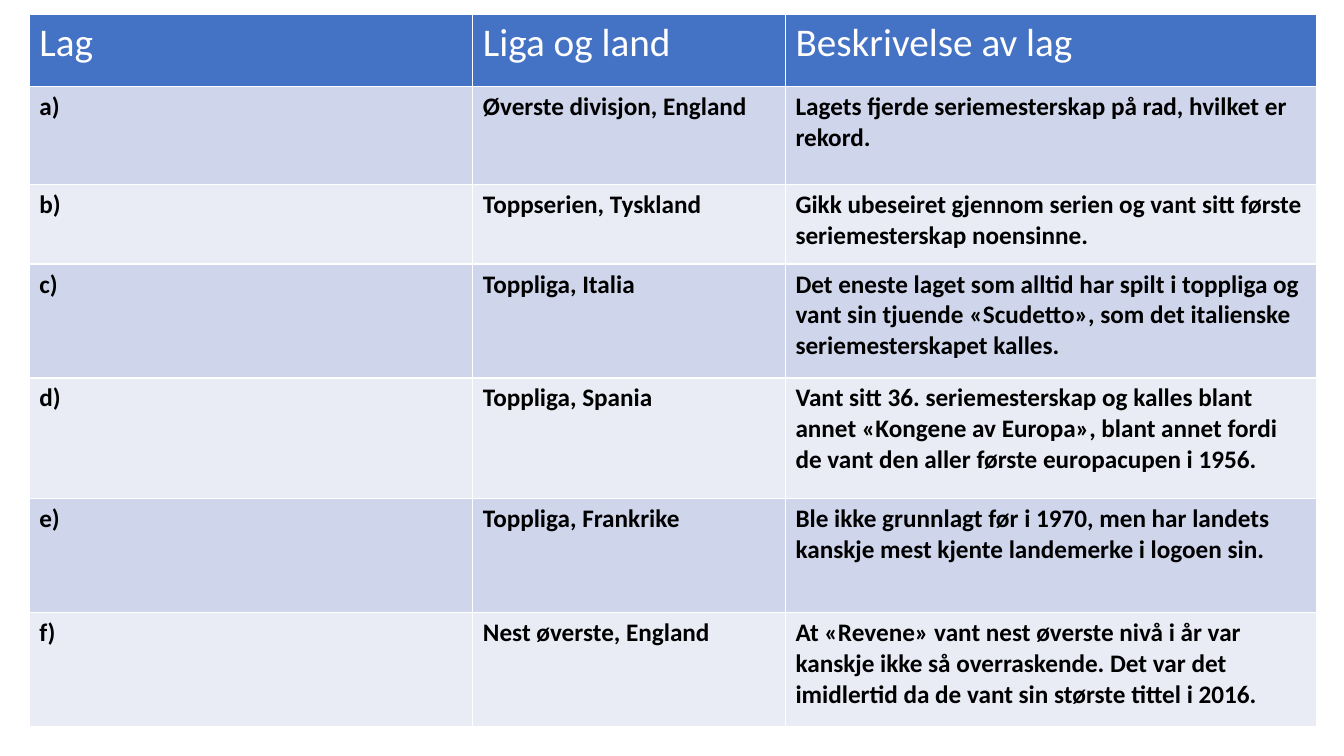
"""Build a slide with a table of football teams, leagues and descriptions."""
from lxml import etree
from pptx import Presentation
from pptx.dml.color import RGBColor
from pptx.oxml import ns
from pptx.util import Inches, Pt

COLORS = {
    "header": "4472C4",
    "odd": "CFD5EA",
    "even": "E9EBF5",
    "border": "FFFFFF",
    "header_text": "FFFFFF",
    "body_text": "000000",
}
COLUMN_WIDTHS = [4.4, 3.1, 5.27]
ROW_HEIGHTS = [0.72, 0.97, 0.79, 1.13, 1.2, 1.13, 1.13]
ROWS = [
    ("Lag", "Liga og land", "Beskrivelse av lag"),
    ("a)", "Øverste divisjon, England",
     "Lagets fjerde seriemesterskap på rad, hvilket er rekord."),
    ("b)", "Toppserien, Tyskland",
     "Gikk ubeseiret gjennom serien og vant sitt første seriemesterskap noensinne."),
    ("c)", "Toppliga, Italia",
     "Det eneste laget som alltid har spilt i toppliga og vant sin tjuende «Scudetto», "
     "som det italienske seriemesterskapet kalles."),
    ("d)", "Toppliga, Spania",
     "Vant sitt 36. seriemesterskap og kalles blant annet «Kongene av Europa», "
     "blant annet fordi de vant den aller første europacupen i 1956."),
    ("e)", "Toppliga, Frankrike",
     "Ble ikke grunnlagt før i 1970, men har landets kanskje mest kjente landemerke "
     "i logoen sin."),
    ("f)", "Nest øverste, England",
     "At «Revene» vant nest øverste nivå i år var kanskje ikke så overraskende. "
     "Det var det imidlertid da de vant sin største tittel i 2016."),
]


def add_borders(cell):
    """Draw the four white edges of a cell."""
    properties = cell._tc.get_or_add_tcPr()
    for position, edge in enumerate(("lnL", "lnR", "lnT", "lnB")):
        line = etree.Element(ns.qn(f"a:{edge}"), w=str(Pt(1)))
        fill = etree.SubElement(line, ns.qn("a:solidFill"))
        etree.SubElement(fill, ns.qn("a:srgbClr"), val=COLORS["border"])
        properties.insert(position, line)


deck = Presentation()
deck.slide_width = Inches(13.33)
deck.slide_height = Inches(7.5)
page = deck.slides.add_slide(deck.slide_layouts[6])

frame = page.shapes.add_table(
    len(ROWS), len(COLUMN_WIDTHS), Inches(0.29), Inches(0.14),
    Inches(sum(COLUMN_WIDTHS)), Inches(sum(ROW_HEIGHTS)))
table = frame.table
for column, width in zip(table.columns, COLUMN_WIDTHS):
    column.width = Inches(width)
for row, height in zip(table.rows, ROW_HEIGHTS):
    row.height = Inches(height)

for row_index, texts in enumerate(ROWS):
    is_header = row_index == 0
    band = "header" if is_header else ("even", "odd")[row_index % 2]
    for column_index, content in enumerate(texts):
        cell = table.cell(row_index, column_index)
        cell.fill.solid()
        cell.fill.fore_color.rgb = RGBColor.from_string(COLORS[band])
        add_borders(cell)
        span = cell.text_frame.paragraphs[0].add_run()
        span.text = content
        span.font.name = "Calibri"
        span.font.size = Pt(28 if is_header else 18)
        span.font.bold = not is_header
        span.font.color.rgb = RGBColor.from_string(
            COLORS["header_text" if is_header else "body_text"])

deck.save("out.pptx")
